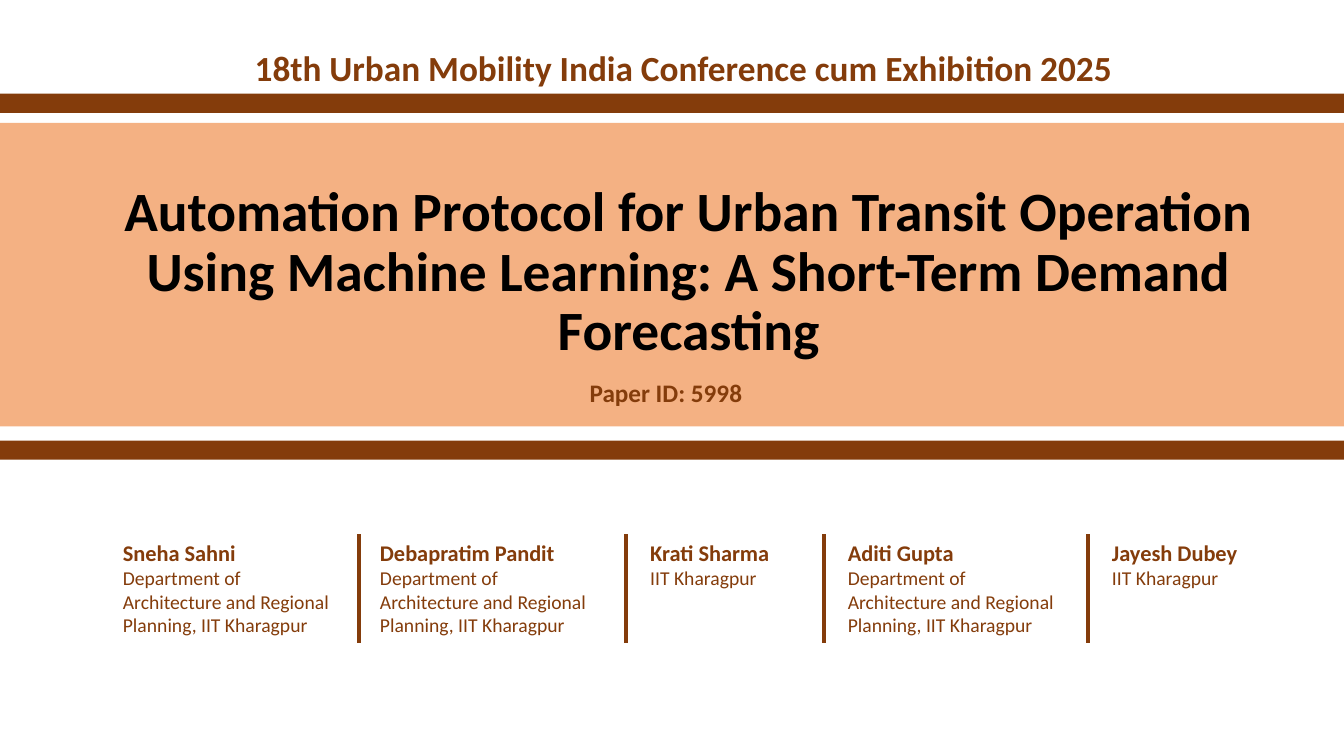
import pptx
import pptx.util
import pptx.dml.color
import pptx.enum.shapes
import pptx.enum.text
from dataclasses import dataclass
from lxml import etree

Inches = pptx.util.Inches
ALIGN = pptx.enum.text.PP_ALIGN
ANCHOR = pptx.enum.text.MSO_ANCHOR


@dataclass(frozen=True)
class Theme:
    font: str = "Calibri"
    brown: str = "843C0B"
    peach: str = "F4B183"
    black: str = "000000"
    title: float = 39.6
    event: float = 25.2
    paper: float = 18
    name: float = 16
    place: float = 14
    rule: float = 3


THEME = Theme()
DEPT = "Department of Architecture and Regional Planning, IIT Kharagpur"
CAMPUS = "IIT Kharagpur"
AUTHORS = [
    (1.12, "Sneha Sahni", DEPT),
    (3.67, "Debapratim Pandit", DEPT),
    (6.35, "Krati Sharma", CAMPUS),
    (8.31, "Aditi Gupta", DEPT),
    (10.93, "Jayesh Dubey", CAMPUS),
]
RULES = [3.56, 6.21, 8.17, 10.79]
ROW_TOP = 5.3
ROW_HIGH = 1.08


def color(code):
    return pptx.dml.color.RGBColor.from_string(code)


def apply(item, values):
    for key, value in values.items():
        setattr(item, key, value)


def write(para, text, size, code=THEME.brown, bold=True, **values):
    run = para.add_run()
    run.text = text
    apply(run.font, {"name": THEME.font, "size": pptx.util.Pt(size), "bold": bold})
    run.font.color.rgb = color(code)
    apply(para, values)


def add_band(slide, top, high, code):
    kind = pptx.enum.shapes.MSO_SHAPE.RECTANGLE
    band = slide.shapes.add_shape(kind, 0, Inches(top), Inches(13.33), Inches(high))
    band.shadow.inherit = False
    band.fill.solid()
    band.fill.fore_color.rgb = color(code)
    band.line.fill.background()


def add_text(slide, left, top, wide, high):
    box = slide.shapes.add_textbox(*map(Inches, (left, top, wide, high)))
    box.text_frame.word_wrap = True
    return box.text_frame


def add_title(slide, text):
    title = slide.shapes.title
    title.element.getparent().append(title.element)
    apply(title, {"left": Inches(0.69), "top": Inches(0.67),
                  "width": Inches(12.28), "height": Inches(3.56)})
    frame = title.text_frame
    apply(frame, {"word_wrap": True, "vertical_anchor": ANCHOR.BOTTOM,
                  "margin_bottom": Inches(0.63),
                  "auto_size": pptx.enum.text.MSO_AUTO_SIZE.NONE})
    write(frame.paragraphs[0], text, THEME.title, THEME.black,
          alignment=ALIGN.CENTER, line_spacing=0.9)


def add_author(slide, left, name, place):
    high = ROW_HIGH if place == DEPT else 0.61
    frame = add_text(slide, left, ROW_TOP, 2.25, high)
    write(frame.paragraphs[0], name, THEME.name)
    write(frame.add_paragraph(), place, THEME.place, bold=False)


def add_rule(slide, left):
    kind = pptx.enum.shapes.MSO_CONNECTOR.STRAIGHT
    ends = map(Inches, (left, ROW_TOP, left, ROW_TOP + ROW_HIGH))
    rule = slide.shapes.add_connector(kind, *ends)
    rule.line.color.rgb = color(THEME.brown)
    rule.line.width = pptx.util.Pt(THEME.rule)
    etree.SubElement(rule.element.spPr, pptx.oxml.ns.qn("a:effectLst"))


def main():
    deck = pptx.Presentation()
    apply(deck, {"slide_width": Inches(13.33), "slide_height": Inches(7.5)})
    slide = deck.slides.add_slide(deck.slide_layouts[5])
    add_band(slide, 1.22, 3.01, THEME.peach)
    add_title(slide, "Automation Protocol for Urban Transit Operation "
                     "Using Machine Learning: A Short-Term Demand Forecasting")
    for top in (0.93, 4.37):
        add_band(slide, top, 0.19, THEME.brown)
    event = add_text(slide, 0.69, 0.41, 12.18, 0.52)
    write(event.paragraphs[0],
          "18th Urban Mobility India Conference cum Exhibition 2025",
          THEME.event, alignment=ALIGN.CENTER)
    paper = add_text(slide, 5.75, 3.69, 3.54, 0.4)
    write(paper.paragraphs[0], "Paper ID: 5998", THEME.paper)
    for author in AUTHORS:
        add_author(slide, *author)
    for left in RULES:
        add_rule(slide, left)
    deck.save("out.pptx")


if __name__ == "__main__":
    main()
